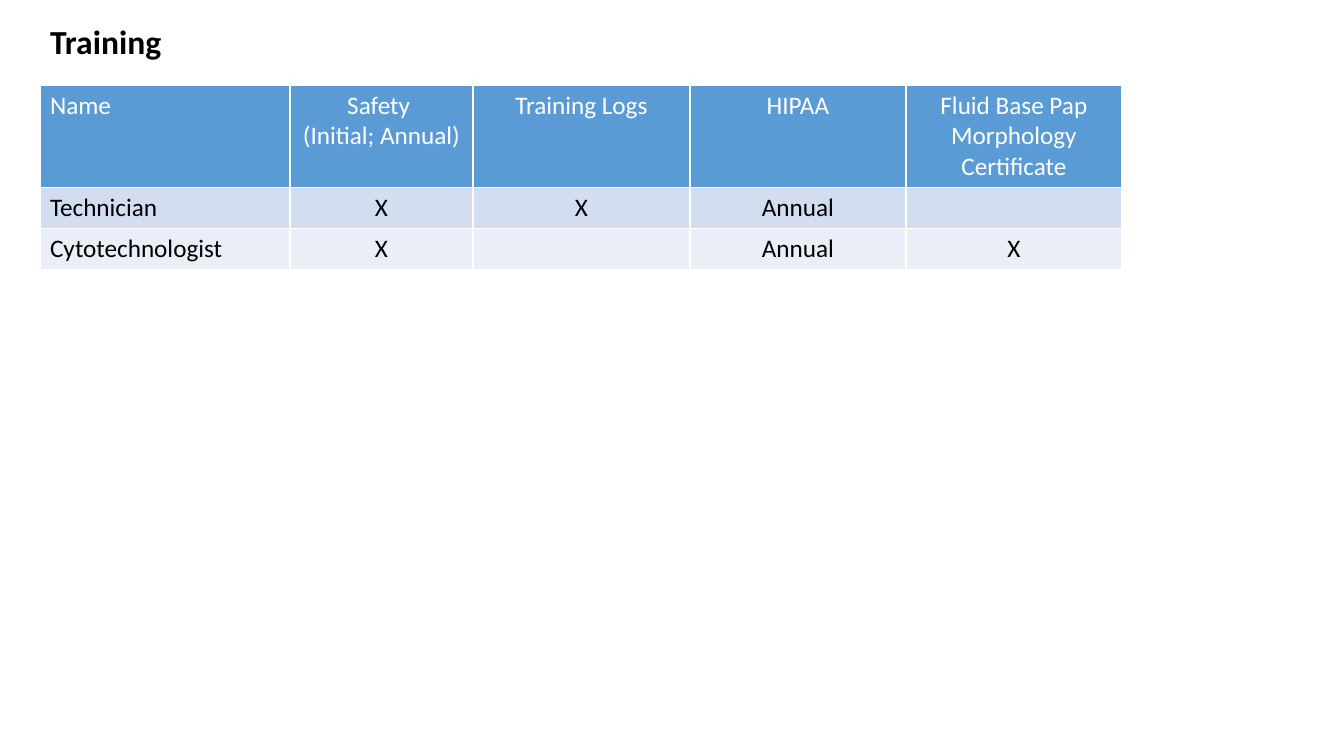
from dataclasses import dataclass

from lxml.etree import SubElement
from pptx import Presentation
from pptx.dml.color import RGBColor as RGB
from pptx.enum.text import MSO_ANCHOR as Anchor, PP_ALIGN as Align
from pptx.oxml.ns import qn
from pptx.util import Emu, Pt


@dataclass(frozen=True)
class Theme:
    font: str = "Calibri"
    head: str = "5B9BD5"
    bands: tuple = ("D2DEEF", "EAEFF7")
    white: str = "FFFFFF"
    black: str = "000000"
    title: int = 24
    body: int = 18
    rule: int = 1


THEME = Theme()
COLS = (250, 183, 217, 216, 216)
ROWS = (102, 41, 41)
DATA = (
    ("Name", "Safety \n(Initial; Annual)", "Training Logs", "HIPAA",
     "Fluid Base Pap Morphology Certificate"),
    ("Technician", "X", "X", "Annual", ""),
    ("Cytotechnologist", "X", "", "Annual", "X"),
)


def px(num):
    return Emu(round(num * 914400 / 100.8))


def write(frame, text, size=THEME.body, color=THEME.black, bold=False,
          align=Align.LEFT):
    """Fill a text frame, one paragraph for each line of text."""
    frame.text = text
    for para in frame.paragraphs:
        para.alignment = align
        font = para.font
        font.name, font.size, font.bold = THEME.font, Pt(size), bold
        font.color.rgb = RGB.from_string(color)


def edge(cell):
    """Draw thin white borders on all four sides of a cell."""
    props = cell._tc.get_or_add_tcPr()
    for side in "LRTB":
        line = SubElement(props, qn(f"a:ln{side}"), w=str(Pt(THEME.rule)))
        fill = SubElement(line, qn("a:solidFill"))
        SubElement(fill, qn("a:srgbClr"), val=THEME.white)


def add_title(slide, text, left, top, width, height):
    box = slide.shapes.title
    box.left, box.top = px(left), px(top)
    box.width, box.height = px(width), px(height)
    frame = box.text_frame
    frame.word_wrap = False
    frame.vertical_anchor = Anchor.TOP
    write(frame, text, size=THEME.title, bold=True)


def add_grid(slide, left, top):
    table = slide.shapes.add_table(
        len(ROWS), len(COLS), px(left), px(top),
        px(sum(COLS)), px(sum(ROWS))).table
    for col, width in zip(table.columns, COLS):
        col.width = px(width)
    for row, height in zip(table.rows, ROWS):
        row.height = px(height)
    for i, line in enumerate(DATA):
        head = i == 0
        tint = THEME.head if head else THEME.bands[(i - 1) % 2]
        for j, text in enumerate(line):
            cell = table.cell(i, j)
            edge(cell)
            cell.fill.solid()
            cell.fill.fore_color.rgb = RGB.from_string(tint)
            write(cell.text_frame, text,
                  color=THEME.white if head else THEME.black,
                  align=Align.CENTER if j else Align.LEFT)


def main():
    deck = Presentation()
    deck.slide_width, deck.slide_height = px(1344), px(756)
    slide = deck.slides.add_slide(deck.slide_layouts[5])
    add_grid(slide, 40, 85)
    add_title(slide, "Training", 40, 16, 133, 50)
    deck.save("out.pptx")


if __name__ == "__main__":
    main()
